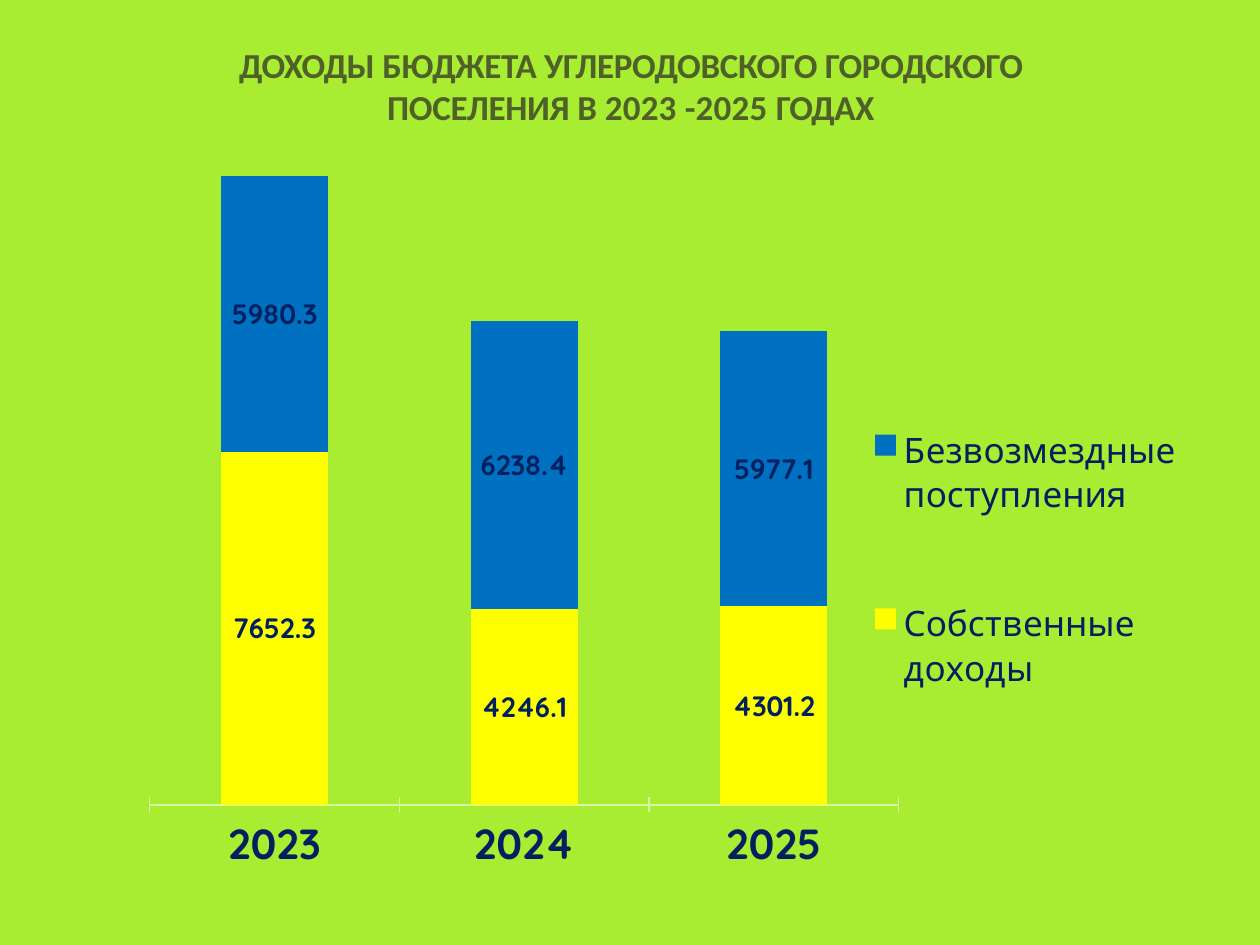
from lxml import etree
from pptx import Presentation
from pptx.chart.data import CategoryChartData
from pptx.dml.color import RGBColor
from pptx.enum.chart import XL_CHART_TYPE, XL_LEGEND_POSITION, XL_TICK_MARK
from pptx.enum.shapes import MSO_SHAPE
from pptx.enum.text import PP_ALIGN
from pptx.oxml.ns import qn
from pptx.util import Cm, Pt

STACKED = XL_CHART_TYPE.COLUMN_STACKED
RIGHT = XL_LEGEND_POSITION.RIGHT
CROSS = XL_TICK_MARK.CROSS
RECT = MSO_SHAPE.RECTANGLE
CENTER = PP_ALIGN.CENTER

LIME, OLIVE, NAVY, WHITE = "A8ED31", "4F6128", "002060", "FFFFFF"
YEARS = ["2023", "2024", "2025"]
INCOME = [
    ("Собственные доходы", [7652.3, 4246.1, 4301.2], "FFFF00"),
    ("Безвозмездные поступления", [5980.3, 6238.4, 5977.1], "0070C0"),
]
# Title runs with their letter spacing in points
TITLE = [
    ("ДОХОДЫ ", -0.3),
    ("БЮДЖЕТА УГЛЕРОДОВСКОГО ГОРОДСКОГО ПОСЕЛЕНИЯ ", -0.2),
    ("В ", 0),
    ("2023 -2025 ", 0.1),
    ("ГОДАХ", -0.4),
]


def paint(color, code):
    color.rgb = RGBColor.from_string(code)


def fill(part, code):
    part.fill.solid()
    paint(part.fill.fore_color, code)


def style(font, code, **look):
    for key, value in look.items():
        setattr(font, key, value)
    paint(font.color, code)


def place(part, x, y, w, h, inner=False):
    """Set a manual layout, as fractions of the chart area."""
    for old in part.findall(qn("c:layout")):
        part.remove(old)
    outer = etree.Element(qn("c:layout"))
    box = etree.SubElement(outer, qn("c:manualLayout"))
    items = [("layoutTarget", "inner")] if inner else []
    items += [("xMode", "edge"), ("yMode", "edge")]
    items += [("x", x), ("y", y), ("w", w), ("h", h)]
    for tag, value in items:
        etree.SubElement(box, qn("c:" + tag)).set("val", str(value))
    if inner:
        part.insert(0, outer)
    else:
        part.find(qn("c:legendPos")).addnext(outer)


def add_back(slide, width, height):
    back = slide.shapes.add_shape(RECT, 0, 0, width, height)
    back.shadow.inherit = False
    fill(back, LIME)
    back.line.fill.background()


def add_title(slide):
    frame = slide.shapes.add_textbox(Cm(3.48), Cm(0.84), Cm(18.47), Cm(1.75)).text_frame
    look = dict(word_wrap=True, margin_left=0, margin_right=0,
                margin_top=Cm(0.03), margin_bottom=0)
    for key, value in look.items():
        setattr(frame, key, value)
    para = frame.paragraphs[0]
    para.alignment = CENTER
    for text, gap in TITLE:
        run = para.add_run()
        run.text = text
        style(run.font, OLIVE, name="Calibri", size=Pt(20), bold=True)
        run._r.get_or_add_rPr().set("spc", str(round(gap * 100)))


def add_bars(slide):
    data = CategoryChartData(number_format="0.0")
    data.categories = YEARS
    for name, values, _ in INCOME:
        data.add_series(name, values)
    chart = slide.shapes.add_chart(
        STACKED, Cm(1.91), Cm(2.72), Cm(22.2), Cm(15.01), data).chart
    chart.has_title = False
    style(chart.font, WHITE, name="Quicksand", size=Pt(9.7))

    # Bars and value labels
    plot = chart.plots[0]
    plot.gap_width, plot.overlap = 134, 100
    plot.vary_by_categories = False
    for bars, (_, _, code) in zip(plot.series, INCOME):
        fill(bars.format, code)
        labels = bars.data_labels
        labels.show_value = True
        style(labels.font, NAVY, name="Quicksand", size=Pt(16), bold=True)

    # Axes
    years = chart.category_axis
    years.major_tick_mark = CROSS
    years.format.line.width = Pt(0.75)
    paint(years.format.line.color, "D9F6A5")
    style(years.tick_labels.font, NAVY, name="Quicksand", size=Pt(24), bold=True)
    scale = chart.value_axis
    scale.visible = False
    scale.has_major_gridlines = False
    scale.minimum_scale, scale.maximum_scale = 0, 13720

    # Legend and layout
    chart.has_legend = True
    legend = chart.legend
    legend.position = RIGHT
    legend.include_in_layout = False
    style(legend.font, NAVY, name="Quicksand", size=Pt(20))
    place(legend._element, 0.7, 0.28, 0.29, 0.58)
    area = chart._chartSpace.find(".//" + qn("c:plotArea"))
    place(area, 0.05, 0.05, 0.68, 0.85, inner=True)


def main():
    deck = Presentation()
    deck.slide_width, deck.slide_height = Cm(25.4), Cm(19.05)
    slide = deck.slides.add_slide(deck.slide_layouts[6])
    add_back(slide, deck.slide_width, deck.slide_height)
    add_title(slide)
    add_bars(slide)
    deck.save("out.pptx")


if __name__ == "__main__":
    main()
